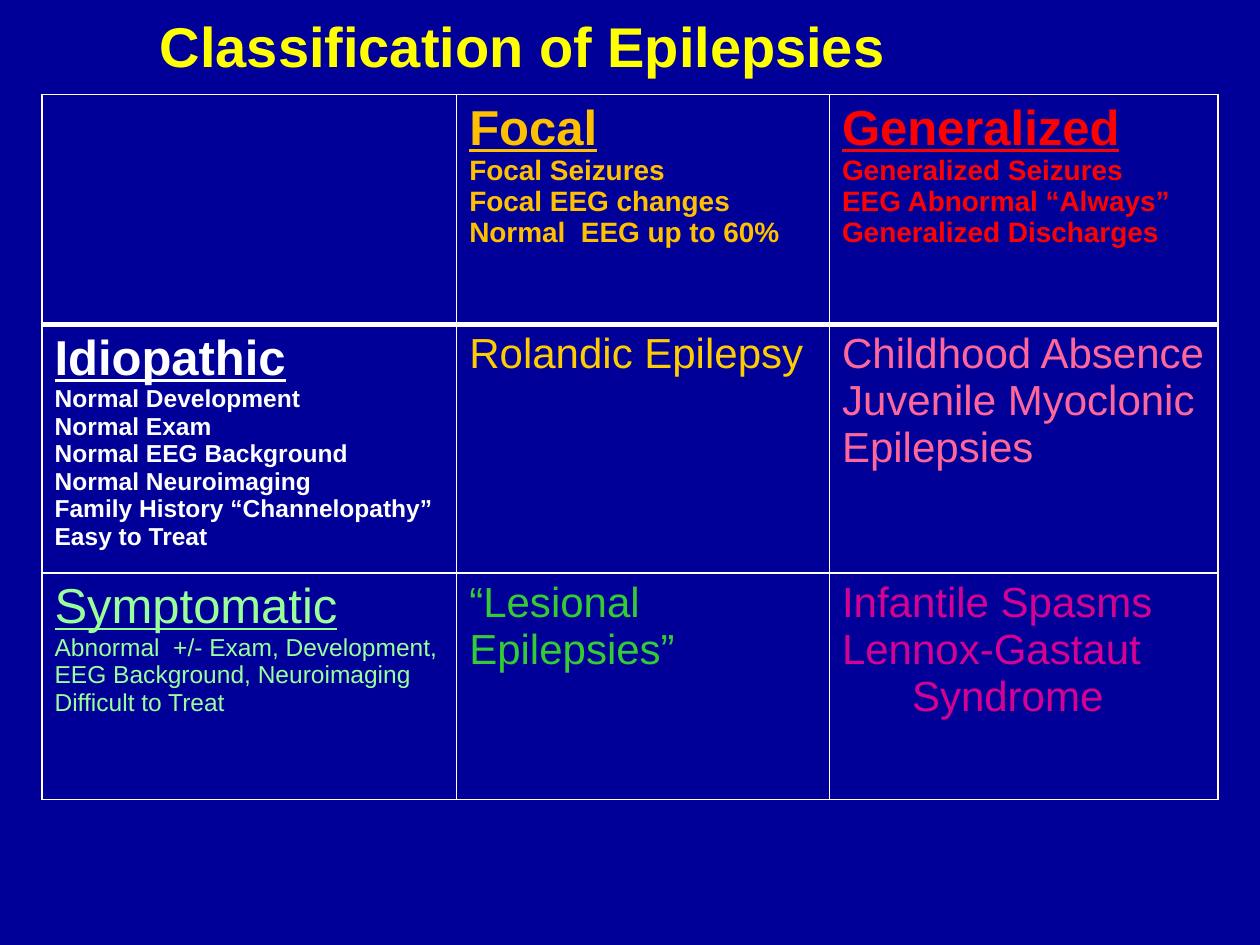
from lxml import etree
from pptx import Presentation
from pptx.dml.color import RGBColor
from pptx.oxml.ns import qn
from pptx.util import Pt

FONT = "Arial"
NAVY, WHITE, YELLOW = "000099", "FFFFFF", "FFFF00"
TITLE = "Classification of Epilepsies"

# Each cell: heading, heading size, body lines, body size, colour, bold
CELLS = [
    [None,
     ("Focal", ["Focal Seizures", "Focal EEG changes", "Normal  EEG up to 60%"],
      16, "FFC000", True),
     ("Generalized", ["Generalized Seizures", "EEG Abnormal “Always”",
                      "Generalized Discharges"], 16, "FF0000", True)],
    [("Idiopathic", ["Normal Development", "Normal Exam", "Normal EEG Background",
                     "Normal Neuroimaging", "Family History “Channelopathy”",
                     "Easy to Treat"], 14, WHITE, True),
     (None, ["Rolandic Epilepsy"], 24, "FFCC00", False),
     (None, ["Childhood Absence", "Juvenile Myoclonic", "Epilepsies"],
      24, "FF6699", False)],
    [("Symptomatic", ["Abnormal  +/- Exam, Development, EEG Background, Neuroimaging",
                      "Difficult to Treat"], 14, "99FF99", False),
     (None, ["“Lesional", "Epilepsies”"], 24, "33CC33", False),
     (None, ["Infantile Spasms", "Lennox-Gastaut", "Syndrome"],
      24, "D60093", False)],
]
INDENTED = {"Syndrome": 40}
HEADING_SIZE = 28
COLUMN_WIDTHS = [237, 213, 222]
ROW_HEIGHTS = [131.5, 142, 129.5]


def color(value):
    return RGBColor.from_string(value)


def style(paragraph, text, size, fill, bold, underline=False):
    paragraph.text = text
    font = paragraph.font
    font.name, font.size, font.bold = FONT, Pt(size), bold
    font.underline = underline
    font.color.rgb = color(fill)
    if text in INDENTED:
        properties = paragraph._p.get_or_add_pPr()
        properties.set("marL", str(Pt(INDENTED[text])))
        properties.set("indent", "0")


def add_borders(cell, widths):
    """Put white borders before the fill, as the schema requires."""
    properties = cell._tc.get_or_add_tcPr()
    for position, (side, width) in enumerate(widths.items()):
        line = etree.Element(qn("a:" + side), w=str(Pt(width)))
        fill = etree.SubElement(line, qn("a:solidFill"))
        etree.SubElement(fill, qn("a:srgbClr"), val=WHITE)
        properties.insert(position, line)


def fill_cell(cell, content):
    cell.fill.solid()
    cell.fill.fore_color.rgb = color(NAVY)
    if content is None:
        return
    heading, body, size, text_color, bold = content
    lines = [(heading, HEADING_SIZE, True)] if heading else []
    lines += [(text, size, False) for text in body]
    frame = cell.text_frame
    for index, (text, line_size, underline) in enumerate(lines):
        paragraph = frame.add_paragraph() if index else frame.paragraphs[0]
        style(paragraph, text, line_size, text_color, bold, underline)


presentation = Presentation()
presentation.slide_width, presentation.slide_height = Pt(720), Pt(540)
slide = presentation.slides.add_slide(presentation.slide_layouts[6])
slide.background.fill.solid()
slide.background.fill.fore_color.rgb = color(NAVY)

# Title
title = slide.shapes.add_textbox(Pt(84.24), Pt(0), Pt(504), Pt(85))
title.text_frame.word_wrap = True
title.text_frame.margin_top = Pt(6.5)
style(title.text_frame.paragraphs[0], TITLE, 32, YELLOW, True)

# Classification table
table = slide.shapes.add_table(
    len(ROW_HEIGHTS), len(COLUMN_WIDTHS), Pt(24), Pt(54),
    Pt(sum(COLUMN_WIDTHS)), Pt(sum(ROW_HEIGHTS))).table
table.first_row = table.horz_banding = False
for column, width in zip(table.columns, COLUMN_WIDTHS):
    column.width = Pt(width)
for row_index, (row, height) in enumerate(zip(table.rows, ROW_HEIGHTS)):
    row.height = Pt(height)
    # The rule under the header row is thicker
    top = 3 if row_index == 1 else 1
    bottom = 3 if row_index == 0 else 1
    for cell, content in zip(row.cells, CELLS[row_index]):
        fill_cell(cell, content)
        add_borders(cell, {"lnL": 1, "lnR": 1, "lnT": top, "lnB": bottom})

presentation.save("out.pptx")
